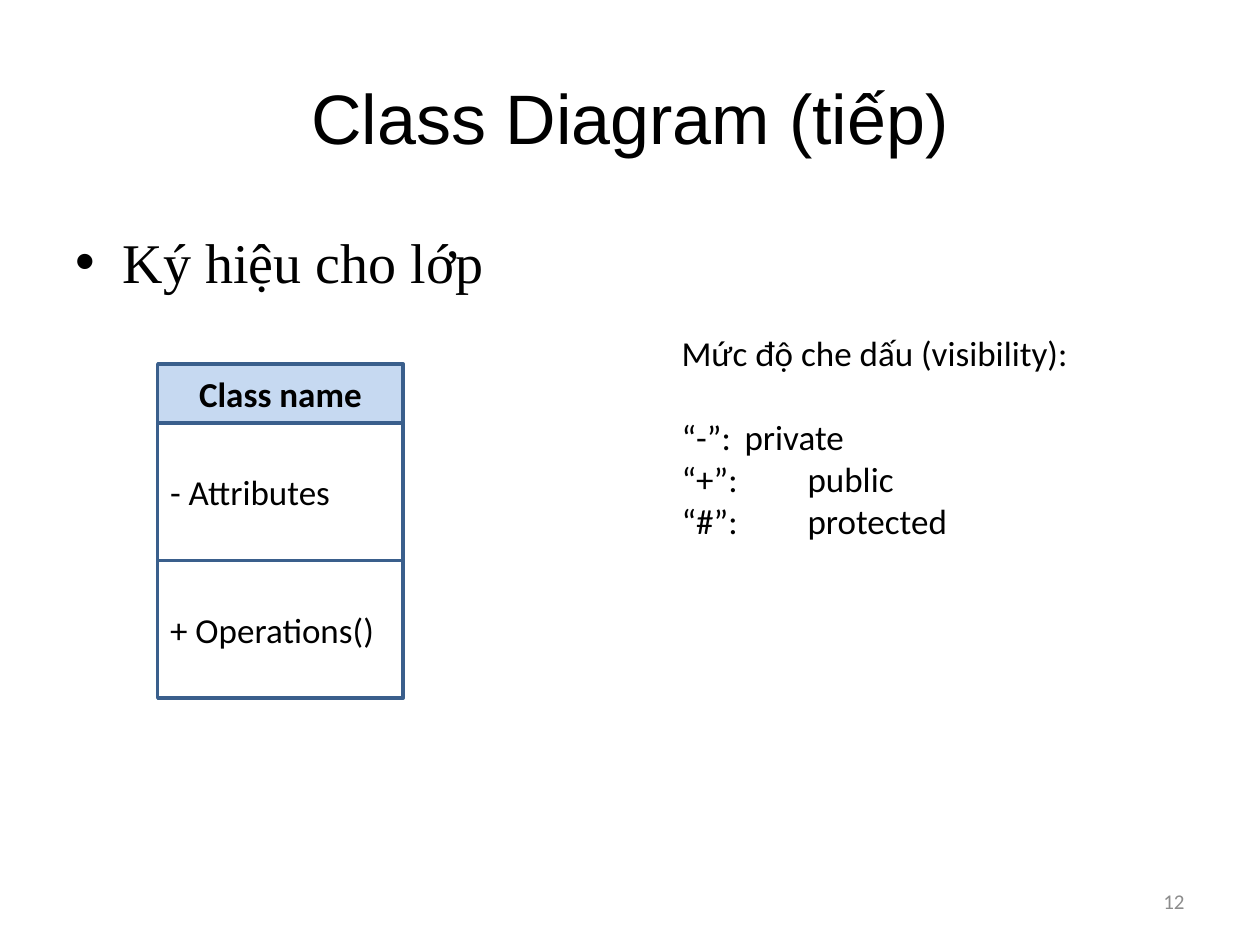
from pptx import Presentation
from pptx.dml.color import RGBColor
from pptx.enum import shapes, text
from pptx.util import Cm, Pt

BLACK = RGBColor(0x00, 0x00, 0x00)
WHITE = RGBColor(0xFF, 0xFF, 0xFF)
GRAY = RGBColor(0x8C, 0x8C, 0x8C)
LIGHT_BLUE = RGBColor(0xC6, 0xD9, 0xF1)
DARK_BLUE = RGBColor(0x3A, 0x5F, 0x8C)

TITLE = "Class Diagram (tiếp)"
BULLET = "Ký hiệu cho lớp"
PAGE_NUMBER = "12"
# text, height in cm, fill, bold, alignment
COMPARTMENTS = [
    ("Class name", 1.19, LIGHT_BLUE, True, text.PP_ALIGN.CENTER),
    ("- Attributes", 2.77, WHITE, False, text.PP_ALIGN.LEFT),
    ("+ Operations()", 2.77, WHITE, False, text.PP_ALIGN.LEFT),
]
VISIBILITY_HEADING = "Mức độ che dấu (visibility):"
VISIBILITY = [("“-”", "private"), ("“+”", "public"), ("“#”", "protected")]

CLASS_LEFT, CLASS_TOP, CLASS_WIDTH = 3.18, 7.34, 4.95


def place(shape, left, top, width, height):
    shape.left, shape.top = Cm(left), Cm(top)
    shape.width, shape.height = Cm(width), Cm(height)


def write(shape, content, font_name, size, color=BLACK, bold=False,
          align=text.PP_ALIGN.LEFT, anchor=text.MSO_ANCHOR.MIDDLE):
    frame = shape.text_frame
    frame.text = content
    frame.word_wrap = True
    frame.auto_size = text.MSO_AUTO_SIZE.NONE
    frame.vertical_anchor = anchor
    for paragraph in frame.paragraphs:
        paragraph.alignment = align
        for run in paragraph.runs:
            run.font.name = font_name
            run.font.size = Pt(size)
            run.font.bold = bold
            run.font.color.rgb = color


def add_class_box(slide):
    top = CLASS_TOP
    for label, height, fill, bold, align in COMPARTMENTS:
        box = slide.shapes.add_shape(
            shapes.MSO_SHAPE.RECTANGLE,
            Cm(CLASS_LEFT), Cm(top), Cm(CLASS_WIDTH), Cm(height))
        box.shadow.inherit = False
        box.fill.solid()
        box.fill.fore_color.rgb = fill
        box.line.color.rgb = DARK_BLUE
        box.line.width = Pt(2)
        write(box, label, "Calibri", 20, bold=bold, align=align)
        top += height


def add_visibility_legend(slide):
    legend = slide.shapes.add_textbox(Cm(13.49), Cm(6.55), Cm(9.32), Cm(4.52))
    lines = [VISIBILITY_HEADING]
    lines += [f"{symbol}: \t{meaning}" for symbol, meaning in VISIBILITY]
    write(legend, "\n".join(lines), "Calibri", 20, anchor=text.MSO_ANCHOR.TOP)
    legend.text_frame.paragraphs[0].space_after = Pt(24)


def main():
    presentation = Presentation()
    presentation.slide_width, presentation.slide_height = Cm(25.4), Cm(19.05)
    slide = presentation.slides.add_slide(presentation.slide_layouts[1])

    title, body = slide.placeholders
    place(title, 1.27, 0.76, 22.86, 3.18)
    write(title, TITLE, "Arial", 40, align=text.PP_ALIGN.CENTER)
    place(body, 1.27, 4.45, 22.86, 12.57)
    write(body, BULLET, "Times New Roman", 32, anchor=text.MSO_ANCHOR.TOP)

    number = slide.shapes.add_textbox(Cm(18.2), Cm(17.66), Cm(5.93), Cm(1.01))
    write(number, PAGE_NUMBER, "Calibri", 12, GRAY, align=text.PP_ALIGN.RIGHT)

    add_class_box(slide)
    add_visibility_legend(slide)
    presentation.save("out.pptx")


if __name__ == "__main__":
    main()
